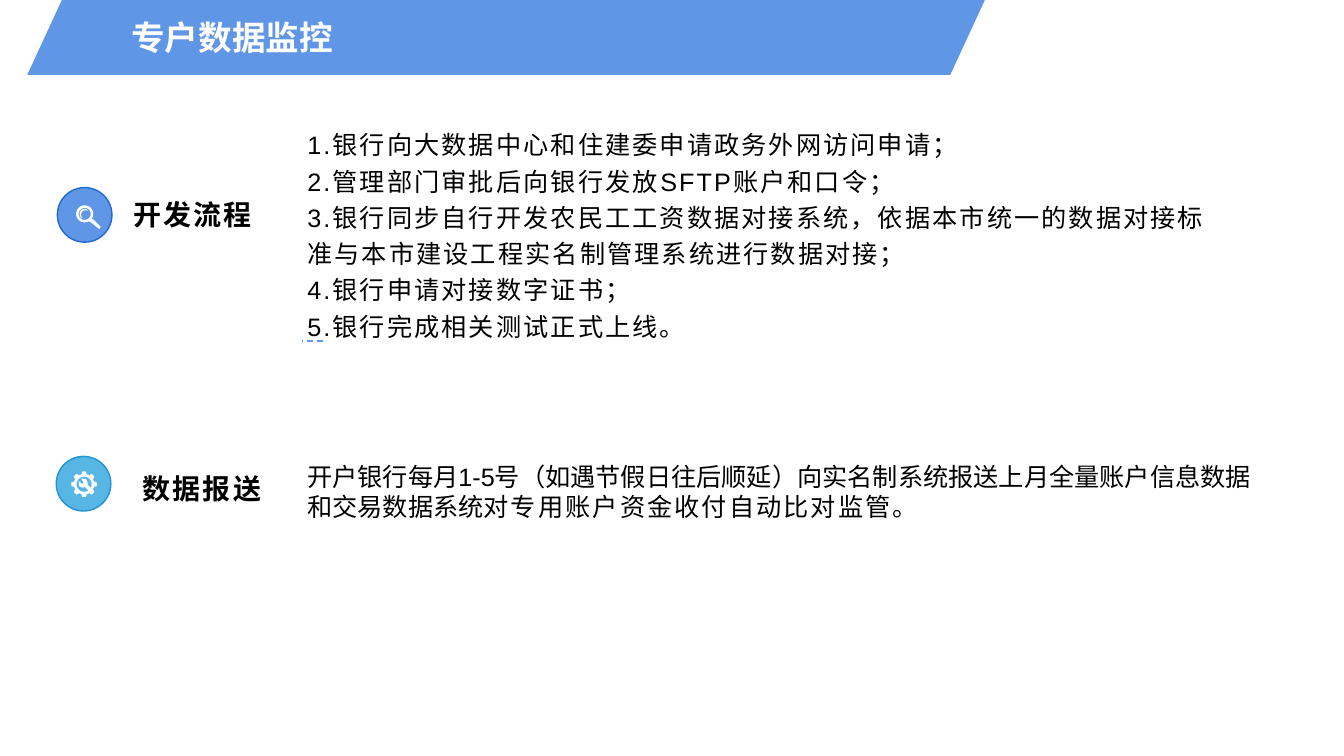
from math import cos, sin, radians
from lxml.etree import SubElement
from pptx import Presentation
from pptx.dml.color import RGBColor
from pptx.enum.dml import MSO_LINE
from pptx.enum.shapes import MSO_CONNECTOR, MSO_SHAPE
from pptx.enum.text import MSO_ANCHOR, PP_ALIGN
from pptx.oxml.ns import qn
from pptx.util import Pt

BLUE, SKY, WHITE, BLACK = "6096E6", "58B6E5", "FFFFFF", "000000"
BODY = {"size": Pt(18), "name": "Arial", "bold": False}
LABEL = {"size": Pt(20), "name": "Arial", "bold": True}
TITLE = {"size": Pt(24), "name": "Arial", "bold": True}

STEPS = [
    "1.银行向大数据中心和住建委申请政务外网访问申请；",
    "2.管理部门审批后向银行发放SFTP账户和口令；",
    "3.银行同步自行开发农民工工资数据对接系统，依据本市统一的数据对接标准与本市建设工程实名制管理系统进行数据对接；",
    "4.银行申请对接数字证书；",
    "5.银行完成相关测试正式上线。",
]
REPORT = [
    ("开户银行每月1-5号（如遇节假日往后顺延）向实名制系统报送上月全量账户信息数据和交易数据系统", 0),
    ("对专用账户资金收付自动比对监管。", 1.5),
]


def rgb(color):
    return RGBColor.from_string(color)


def paint(sp, fill, line=None):
    sp.shadow.inherit = False
    sp.fill.solid()
    sp.fill.fore_color.rgb = rgb(fill)
    if line:
        sp.line.color.rgb = rgb(line)
        sp.line.width = Pt(1)
    else:
        sp.line.fill.background()


def write(sp, paragraphs, style, color=BLACK, spacing=None,
          anchor=MSO_ANCHOR.MIDDLE, align=PP_ALIGN.LEFT):
    tf = sp.text_frame
    tf.word_wrap = True
    tf.vertical_anchor = anchor
    for i, runs in enumerate(paragraphs):
        p = tf.add_paragraph() if i else tf.paragraphs[0]
        p.alignment = align
        if spacing:
            p.line_spacing = spacing
        for text, tracking in runs:
            r = p.add_run()
            r.text = text
            for key, value in style.items():
                setattr(r.font, key, value)
            r.font.color.rgb = rgb(color)
            if tracking:
                r.font._element.set("spc", str(int(tracking * 100)))


def add_text(s, box, paragraphs, style, **options):
    sp = s.shapes.add_textbox(*map(Pt, box))
    write(sp, paragraphs, style, **options)


def arc(x, y, radius, start, end, steps=36):
    angles = [radians(start + (end - start) * i / steps) for i in range(steps + 1)]
    return [(x + radius * cos(a), y + radius * sin(a)) for a in angles]


def magnifier():
    handle = [(6.5, 3.6), (11.5, 8.6), (10.4, 10.1), (5, 5.8)]
    rim = arc(0, -0.7, 6.1, 60, 395) + handle
    lens = arc(0, -0.7, 4.3, 0, 360)
    glint = arc(0, -0.7, 3.6, 130, 300) + arc(0.6, -0.1, 3.2, 300, 130)
    return [rim, lens, glint]


def gear():
    teeth = []
    for i in range(8):
        teeth += arc(0.4, 0.4, 9.1, 45 * i - 9, 45 * i + 9, 4)
        teeth += arc(0.4, 0.4, 7.3, 45 * i + 15, 45 * i + 30, 4)
    wrench = [(0.7, 2.2), (0, 2.9), (-2.9, 2.2), (-3.6, -1.4), (-2.9, -1.4),
              (-1.4, 0), (-0.2, 0), (0, -1.4), (-1.4, -2.9), (-1.4, -3.6),
              (0, -3.6), (2.2, -2.9), (2.9, -0.7), (2.9, 0.7)]
    return [teeth, arc(0.4, 0.4, 5.4, 28, -305) + wrench]


def add_icon(s, box, contours, fill, line):
    left, top, width, height = box
    badge = s.shapes.add_shape(MSO_SHAPE.ROUNDED_RECTANGLE, *map(Pt, box))
    badge.adjustments[0] = 0.5
    paint(badge, fill, line)
    cx, cy = left + width / 2, top + height / 2
    builder = None
    for contour in contours:
        points = [(Pt(cx + x), Pt(cy + y)) for x, y in contour]
        if builder is None:
            builder = s.shapes.build_freeform(*points[0])
        else:
            builder.move_to(*points[0])
        builder.add_line_segments(points[1:], close=True)
    paint(builder.convert_to_shape(), WHITE)


def add_header(s, box):
    sp = s.shapes.add_shape(MSO_SHAPE.PARALLELOGRAM, *map(Pt, box))
    sp.adjustments[0] = 0.462
    paint(sp, BLUE)
    write(sp, [[("专户数据监控", 0)]], TITLE, color=WHITE)


def add_process(s, box):
    left, top, width, height = box
    y = top + 159
    dash = s.shapes.add_connector(
        MSO_CONNECTOR.STRAIGHT, *map(Pt, (left + 189.5, y, left + 174.5, y)))
    dash.line.color.rgb = rgb(BLUE)
    dash.line.width = Pt(1)
    dash.line.dash_style = MSO_LINE.DASH
    SubElement(dash._element.spPr, qn("a:effectLst"))
    add_icon(s, (left, top + 49.5, 39, 39), magnifier(), BLUE, "2169D3")
    add_text(s, (left + 47, top + 40, 113, 53), [[("开发流程", 1.5)]],
             LABEL, spacing=1.2)
    add_text(s, (left + 171.5, top, width - 171.5, height),
             [[(step, 1.5)] for step in STEPS], BODY, spacing=1.2)


def add_reporting(s, box):
    left, top, width, height = box
    add_icon(s, (left, top + 26.5, 39, 39), gear(), SKY, "2094CE")
    add_text(s, (left + 39, top, 130, height), [[("数据报送", 1.5)]],
             LABEL, spacing=1.2, align=PP_ALIGN.CENTER)
    add_text(s, (left + 172.2, top + 26.5, width - 172.2, 73), [REPORT],
             BODY, anchor=MSO_ANCHOR.TOP)


def main():
    prs = Presentation()
    prs.slide_width, prs.slide_height = Pt(960), Pt(540)
    s = prs.slides.add_slide(prs.slide_layouts[6])
    add_header(s, (19.5, 0, 684, 53.5))
    add_process(s, (41, 84.5, 834, 163))
    add_reporting(s, (40.2, 299.5, 871.2, 94))
    prs.save("out.pptx")


if __name__ == "__main__":
    main()
